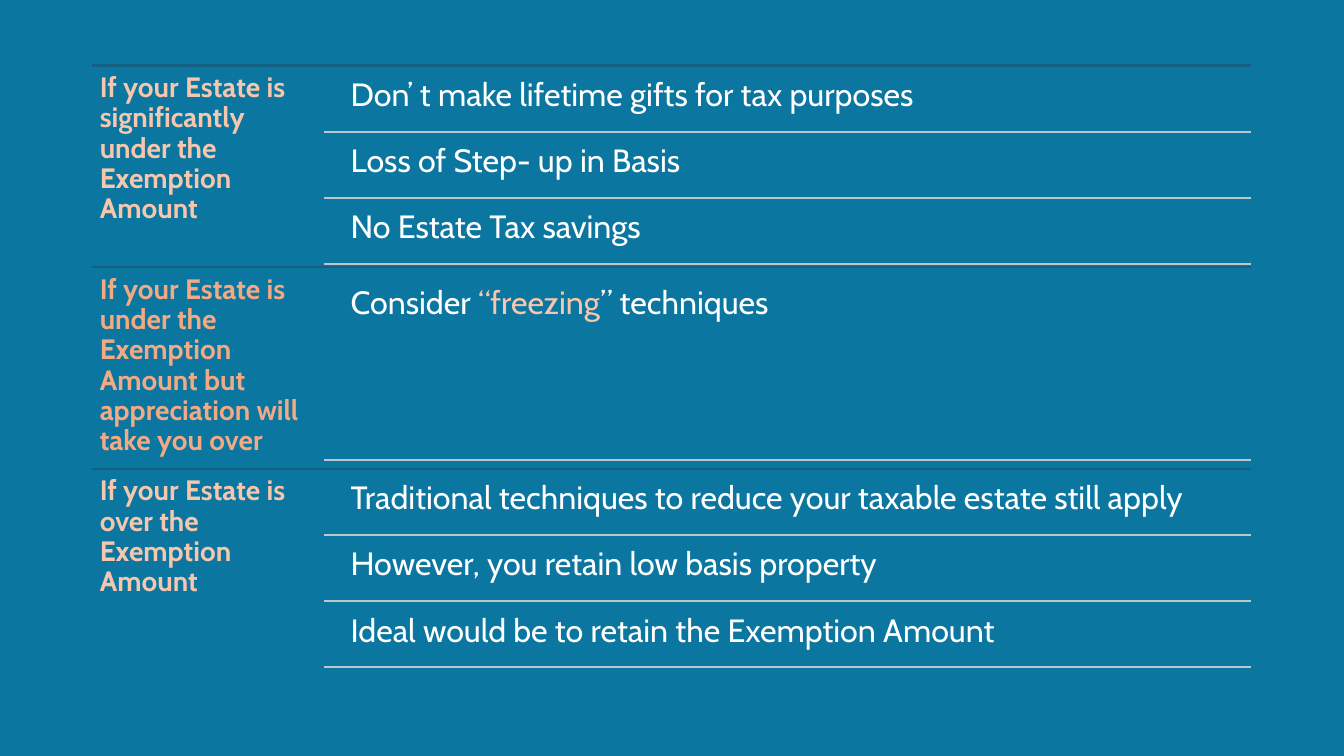
from dataclasses import dataclass

from pptx import Presentation
from pptx.dml.color import RGBColor
from pptx.enum.shapes import MSO_CONNECTOR
from pptx.enum.text import MSO_ANCHOR, MSO_AUTO_SIZE, PP_ALIGN
from pptx.oxml.ns import qn
from pptx.shapes.shapetree import GroupShapes
from pptx.util import Inches, Pt

STRAIGHT = MSO_CONNECTOR.STRAIGHT
TOP = MSO_ANCHOR.TOP
NO_AUTOFIT = MSO_AUTO_SIZE.NONE
LEFT_ALIGN = PP_ALIGN.LEFT


@dataclass(frozen=True)
class Theme:
    font: str = "Cabin"
    background: str = "0B76A0"
    section_rule: str = "156082"
    item_rule: str = "BDC5CD"
    white: str = "FFFFFF"
    peach: str = "F6C6AD"
    orange: str = "F2AA84"
    label_size: float = 20
    item_size: float = 23
    rule_width: float = 1.5
    line_spacing: float = 0.9


THEME = Theme()


@dataclass(frozen=True)
class Span:
    text: str
    color: str = THEME.white
    size: float = THEME.item_size
    bold: bool = False


@dataclass(frozen=True)
class Section:
    label: str
    label_color: str
    items: list[list[Span]]


@dataclass(frozen=True)
class Area:
    left: float
    top: float
    width: float
    height: float


SECTIONS = [
    Section(
        "If your Estate is significantly under the Exemption Amount",
        THEME.peach,
        [
            [Span("Don’ t make lifetime gifts for tax purposes")],
            [Span("Loss of Step- up in Basis")],
            [Span("No Estate Tax savings")],
        ],
    ),
    Section(
        "If your Estate is under the Exemption Amount but appreciation will take you over",
        THEME.orange,
        [[Span("Consider "), Span("“freezing", THEME.peach), Span("” techniques")]],
    ),
    Section(
        "If your Estate is over the Exemption Amount",
        THEME.peach,
        [
            [Span("Traditional techniques to reduce your taxable estate still apply")],
            [Span("However, you retain low basis property")],
            [Span("Ideal would be to retain the Exemption Amount")],
        ],
    ),
]

# Layout in inches
LEFT, RIGHT, FIRST_TOP = 0.91, 12.41, 0.65
LABEL_WIDTH, SECTION_HEIGHT = 2.3, 2.0
RULE_LEFT, ITEM_LEFT = LEFT + LABEL_WIDTH, 3.38
GAP_RATIO = 0.05  # gap between items as a share of item height
LABEL_INSET, ITEM_INSET = 0.08, 0.1


def add_rule(shapes: GroupShapes, left: float, y: float, color: str) -> None:
    rule = shapes.add_connector(
        STRAIGHT, Inches(left), Inches(y), Inches(RIGHT), Inches(y)
    )
    rule.line.color.rgb = RGBColor.from_string(color)
    rule.line.width = Pt(THEME.rule_width)
    properties = rule._element.spPr
    properties.append(properties.makeelement(qn("a:effectLst"), {}))


def add_text(shapes: GroupShapes, area: Area, inset: float, spans: list[Span]) -> None:
    box = shapes.add_textbox(
        Inches(area.left), Inches(area.top), Inches(area.width), Inches(area.height)
    )
    frame_format = {
        "word_wrap": True,
        "auto_size": NO_AUTOFIT,
        "vertical_anchor": TOP,
        "margin_left": Inches(inset),
        "margin_top": Inches(inset),
        "margin_right": Inches(inset),
        "margin_bottom": Inches(inset),
    }
    for name, value in frame_format.items():
        setattr(box.text_frame, name, value)
    para = box.text_frame.paragraphs[0]
    para.alignment = LEFT_ALIGN
    para.line_spacing = THEME.line_spacing
    for span in spans:
        run = para.add_run()
        run.text = span.text
        run_format = {"name": THEME.font, "size": Pt(span.size), "bold": span.bold}
        for name, value in run_format.items():
            setattr(run.font, name, value)
        run.font.color.rgb = RGBColor.from_string(span.color)


def add_section(shapes: GroupShapes, section: Section, top: float) -> None:
    # Label column
    add_rule(shapes, LEFT, top, THEME.section_rule)
    label = Span(section.label, section.label_color, THEME.label_size, True)
    add_text(
        shapes, Area(LEFT, top, LABEL_WIDTH, SECTION_HEIGHT), LABEL_INSET, [label]
    )

    # Items share the section height, with a gap before, between and after them
    count = len(section.items)
    item_height = SECTION_HEIGHT / (count + (count + 1) * GAP_RATIO)
    gap = item_height * GAP_RATIO
    for index, spans in enumerate(section.items):
        item_top = top + gap + index * (item_height + gap)
        area = Area(ITEM_LEFT, item_top, RIGHT - ITEM_LEFT, item_height)
        add_text(shapes, area, ITEM_INSET, spans)
        add_rule(shapes, RULE_LEFT, item_top + item_height, THEME.item_rule)


def main() -> None:
    deck = Presentation()
    deck.slide_width, deck.slide_height = Inches(13.33), Inches(7.5)
    page = deck.slides.add_slide(deck.slide_layouts[6])
    page.background.fill.solid()
    page.background.fill.fore_color.rgb = RGBColor.from_string(THEME.background)

    # Three stacked sections in one group
    diagram = page.shapes.add_group_shape()
    for index, section in enumerate(SECTIONS):
        add_section(diagram.shapes, section, FIRST_TOP + index * SECTION_HEIGHT)

    deck.save("out.pptx")


if __name__ == "__main__":
    main()
